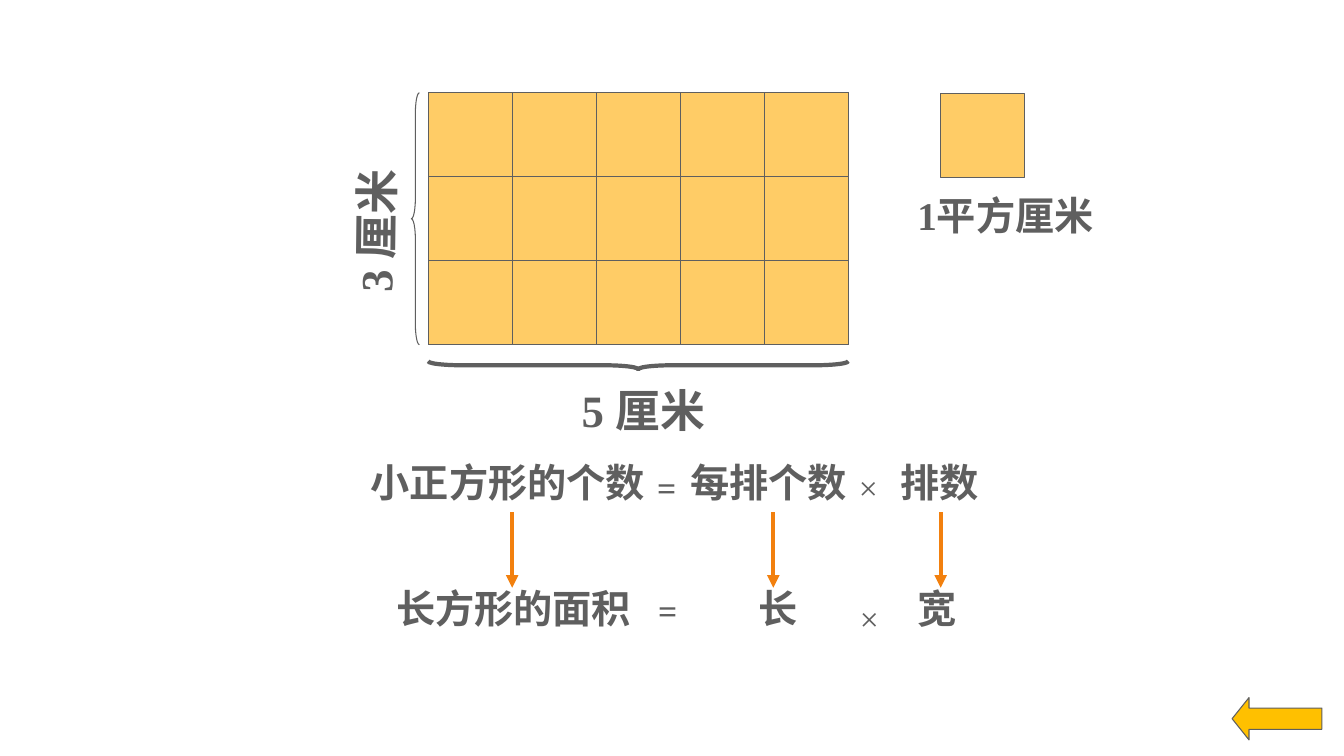
from lxml.etree import SubElement
from pptx import Presentation
from pptx.dml.color import RGBColor
from pptx.enum.shapes import MSO_CONNECTOR, MSO_SHAPE
from pptx.oxml.ns import qn
from pptx.util import Inches, Pt

GRAY = RGBColor(0x5F, 0x5F, 0x5F)
GOLD = RGBColor(0xFF, 0xC0, 0x00)
SAND = RGBColor(0xFF, 0xCC, 0x66)
ORANGE = RGBColor(0xF2, 0x80, 0x0E)
FONT = "Times New Roman"

ROWS, COLS = 3, 5
CELL = 2.5 / 3
LEFT, TOP = 4.25, 0.92
WIDE, HIGH = COLS * CELL, ROWS * CELL
THIN = 0.08

# text, left, top, width, height, size, bold, rotation
LABELS = [
    ("5 厘米", 5.67, 3.75, 2.08, 0.64, 32, True, 0),
    ("3 厘米", 2.69, 1.64, 2.08, 0.64, 32, True, 270.7),
    ("1平方厘米", 9, 1.85, 2.08, 0.57, 28, True, 0),
    ("小正方形的个数", 3.58, 4.5, 3, 0.57, 28, True, 0),
    ("=", 6.42, 4.58, 0.9, 0.5, 24, True, 0),
    ("每排个数", 6.75, 4.5, 1.92, 0.57, 28, True, 0),
    ("×", 8.42, 4.58, 0.67, 0.5, 24, False, 0),
    ("排数", 8.83, 4.5, 1.25, 0.57, 28, True, 0),
    ("长方形的面积", 3.83, 5.75, 2.75, 0.57, 28, True, 0),
    ("=", 6.43, 5.8, 1, 0.5, 24, True, 0),
    ("长", 7.42, 5.75, 1.33, 0.57, 28, True, 0),
    ("×", 8.43, 5.88, 0.92, 0.5, 24, False, 0),
    ("宽", 9, 5.75, 1.08, 0.57, 28, True, 0),
]
ARROWS = [5.08, 7.67, 9.33]
ARROW_TOP, ARROW_END = 5.08, 5.83


def add_shape(slide, kind, left, top, width, height, fill=None, line=0.75):
    shape = slide.shapes.add_shape(
        kind, Inches(left), Inches(top), Inches(width), Inches(height))
    shape.shadow.inherit = False
    if fill is None:
        shape.fill.background()
    else:
        shape.fill.solid()
        shape.fill.fore_color.rgb = fill
    shape.line.color.rgb = GRAY
    shape.line.width = Pt(line)
    return shape


def add_label(slide, text, left, top, width, height, size, bold, turn):
    box = slide.shapes.add_textbox(
        Inches(left), Inches(top), Inches(width), Inches(height))
    box.rotation = turn
    box.text_frame.word_wrap = True
    para = box.text_frame.paragraphs[0]
    para.text = text
    font = para.font
    font.name, font.size, font.bold = FONT, Pt(size), bold
    font.color.rgb = GRAY


def add_arrow(slide, x):
    arrow = slide.shapes.add_connector(
        MSO_CONNECTOR.STRAIGHT,
        Inches(x), Inches(ARROW_TOP), Inches(x), Inches(ARROW_END))
    arrow.line.color.rgb = ORANGE
    arrow.line.width = Pt(3)
    SubElement(arrow.line._get_or_add_ln(), qn("a:tailEnd"), type="triangle")
    SubElement(arrow._element.spPr, qn("a:effectLst"))


def main():
    deck = Presentation()
    deck.slide_width, deck.slide_height = Inches(13.33), Inches(7.5)
    slide = deck.slides.add_slide(deck.slide_layouts[6])

    add_shape(slide, MSO_SHAPE.RECTANGLE, LEFT, TOP, WIDE, HIGH, GOLD)
    for row in range(ROWS):
        for col in range(COLS):
            add_shape(slide, MSO_SHAPE.RECTANGLE, LEFT + col * CELL,
                      TOP + row * CELL, CELL, CELL, SAND)
    add_shape(slide, MSO_SHAPE.RECTANGLE, 9.33, 0.93, CELL, CELL, SAND)

    side = add_shape(slide, MSO_SHAPE.LEFT_BRACE, 4.08, TOP, THIN, HIGH)
    side.adjustments[0] = 2.5
    base = add_shape(slide, MSO_SHAPE.LEFT_BRACE, 6.29, 1.54, THIN, WIDE, line=3)
    base.adjustments[0] = 4.17
    base.rotation = 270

    for label in LABELS:
        add_label(slide, *label)
    for x in ARROWS:
        add_arrow(slide, x)

    back = add_shape(slide, MSO_SHAPE.LEFT_ARROW, 12.22, 6.92, 0.89, 0.42, GOLD)
    back.adjustments[1] = 0.4
    deck.save("out.pptx")


if __name__ == "__main__":
    main()
